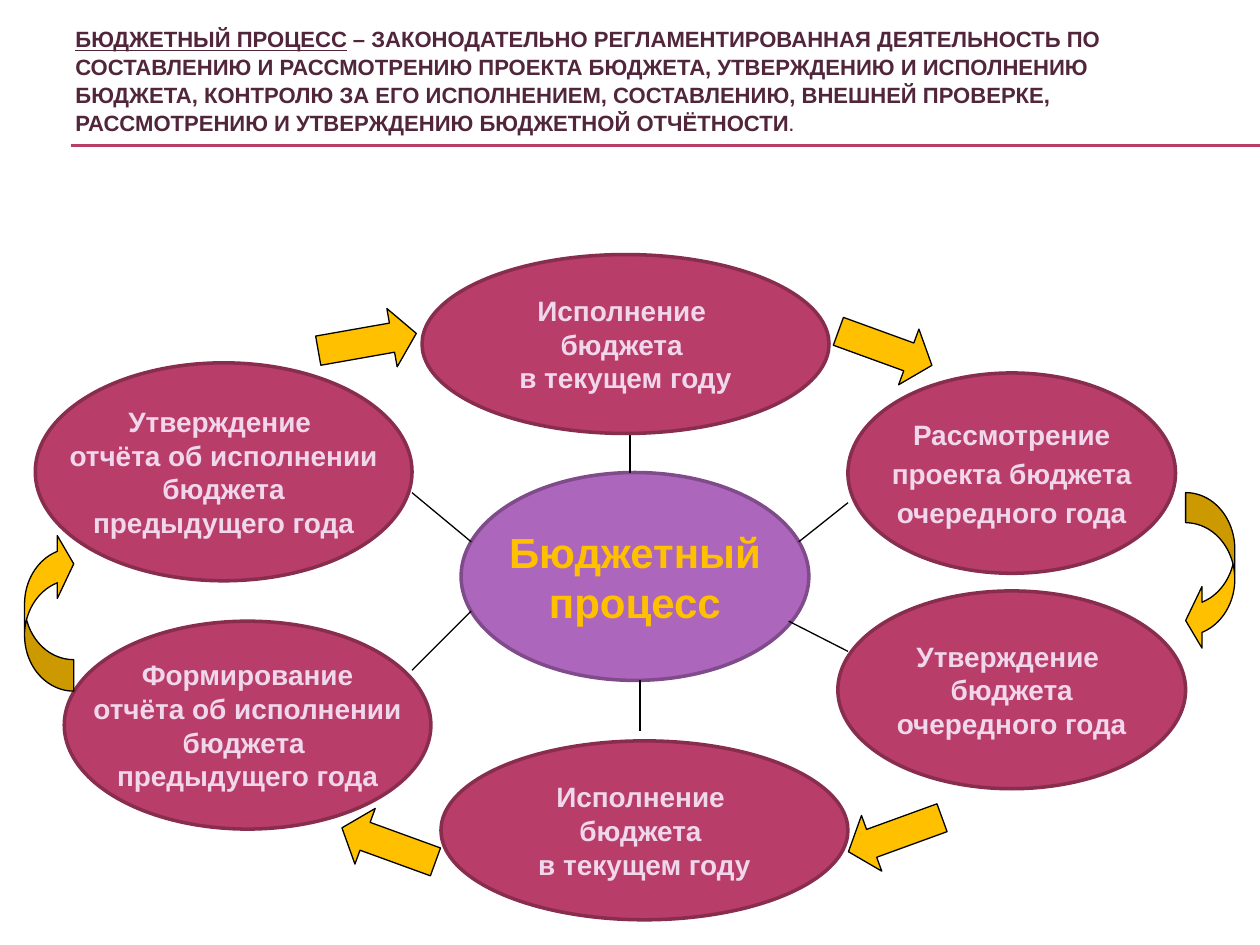
from lxml import etree
from pptx import Presentation
from pptx.dml.color import RGBColor
from pptx.enum.shapes import MSO_CONNECTOR, MSO_SHAPE
from pptx.enum.text import MSO_ANCHOR, PP_ALIGN
from pptx.oxml.ns import qn
from pptx.util import Inches, Pt

STRAIGHT = MSO_CONNECTOR.STRAIGHT
OVAL = MSO_SHAPE.OVAL
RIGHT_ARROW = MSO_SHAPE.RIGHT_ARROW
CURVED_LEFT = MSO_SHAPE.CURVED_LEFT_ARROW
CURVED_DOWN = MSO_SHAPE.CURVED_DOWN_ARROW
MIDDLE = MSO_ANCHOR.MIDDLE
CENTER = PP_ALIGN.CENTER

PLUM = RGBColor(0x51, 0x25, 0x3A)
CRIMSON = RGBColor(0xB8, 0x3D, 0x68)
DARK_CRIMSON = RGBColor(0x88, 0x2D, 0x4D)
PINK = RGBColor(0xF1, 0xD7, 0xEC)
VIOLET = RGBColor(0xAC, 0x66, 0xBB)
DARK_VIOLET = RGBColor(0x7F, 0x4B, 0x8A)
GOLD = RGBColor(0xFF, 0xC0, 0x00)
BLACK = RGBColor(0, 0, 0)

prs = Presentation()
prs.slide_width, prs.slide_height = Inches(10), Inches(7.5)
slide = prs.slides.add_slide(prs.slide_layouts[6])


def add_line(start_x, start_y, end_x, end_y, color):
    line = slide.shapes.add_connector(
        STRAIGHT, Inches(start_x), Inches(start_y), Inches(end_x), Inches(end_y))
    line.line.color.rgb = color
    line.line.width = Pt(0.75)
    etree.SubElement(line._element.spPr, qn("a:effectLst"))


def add_oval(box, lines, fill, outline, color, size, space_before=0):
    oval = slide.shapes.add_shape(OVAL, *map(Inches, box))
    oval.shadow.inherit = False
    oval.fill.solid()
    oval.fill.fore_color.rgb = fill
    oval.line.color.rgb = outline
    oval.line.width = Pt(2)
    frame = oval.text_frame
    frame.word_wrap = False
    frame.vertical_anchor = MIDDLE
    frame.text = "\n".join(lines)
    for paragraph in frame.paragraphs:
        paragraph.alignment = CENTER
        paragraph.space_before = Pt(space_before)
        paragraph.font.name = "Arial"
        paragraph.font.size = Pt(size)
        paragraph.font.bold = True
        paragraph.font.color.rgb = color


for rule_y in (1.15, 1.16):
    add_line(0.56, rule_y, 10, rule_y, CRIMSON)

title = slide.shapes.add_textbox(Inches(0.5), Inches(0.28), Inches(8.99), Inches(0.87))
title_frame = title.text_frame
title_frame.word_wrap = True
title_frame.vertical_anchor = MIDDLE
title_frame.margin_bottom = Inches(0.21)
definition = title_frame.paragraphs[0]
definition.line_spacing = 1.05
definition.font.name = "Arial"
definition.font.size = Pt(12.6)
definition.font.color.rgb = PLUM
for text, bold, underline in (
    ("БЮДЖЕТНЫЙ ПРОЦЕСС", True, True),
    (" – ЗАКОНОДАТЕЛЬНО РЕГЛАМЕНТИРОВАННАЯ ДЕЯТЕЛЬНОСТЬ ПО СОСТАВЛЕНИЮ И "
     "РАССМОТРЕНИЮ ПРОЕКТА БЮДЖЕТА, УТВЕРЖДЕНИЮ И ИСПОЛНЕНИЮ БЮДЖЕТА, КОНТРОЛЮ "
     "ЗА ЕГО ИСПОЛНЕНИЕМ, СОСТАВЛЕНИЮ, ВНЕШНЕЙ ПРОВЕРКЕ, РАССМОТРЕНИЮ И "
     "УТВЕРЖДЕНИЮ БЮДЖЕТНОЙ ОТЧЁТНОСТИ", True, False),
    (".", False, False),
):
    run = definition.add_run()
    run.text = text
    run.font.bold = bold
    run.font.underline = underline

add_oval((3.66, 3.75, 2.76, 1.65), ("Бюджетный", "процесс"), VIOLET, DARK_VIOLET, GOLD, 24)

for spoke in (
    (5.08, 5.4, 5.08, 5.8),
    (3.74, 4.85, 3.27, 5.32),
    (3.27, 3.91, 3.74, 4.3),
    (5, 3.36, 5, 3.75),
    (6.34, 4.3, 6.73, 3.99),
    (6.26, 4.93, 6.73, 5.17),
):
    add_line(*spoke, BLACK)

execution = ("Исполнение ", "бюджета ", "в текущем году")
for box, lines, space_before in (
    ((3.35, 2.02, 3.23, 1.42), execution, 0),
    ((6.73, 2.96, 2.6, 1.59), ("Рассмотрение", "проекта бюджета", "очередного года"), 3.2),
    ((6.65, 4.69, 2.76, 1.57), ("Утверждение ", "бюджета", "очередного года"), 0),
    ((3.5, 5.88, 3.23, 1.42), execution, 0),
    ((0.51, 4.93, 2.91, 1.65),
     ("Формирование", "отчёта об исполнении", "бюджета ", "предыдущего года"), 0),
    ((0.28, 2.88, 2.99, 1.73),
     ("Утверждение ", "отчёта об исполнении", " бюджета ", "предыдущего года"), 0),
):
    add_oval(box, lines, CRIMSON, DARK_CRIMSON, PINK, 16, space_before)

straight_adjustments = (0.5, 0.416)
for kind, box, rotation, adjustments in (
    (RIGHT_ARROW, (6.63, 2.53, 0.79, 0.47), 20, straight_adjustments),
    (CURVED_LEFT, (9.41, 3.91, 0.39, 1.26), 0, (0.613, 1.253, 0.333)),
    (RIGHT_ARROW, (6.71, 6.39, 0.79, 0.47), 160, straight_adjustments),
    (RIGHT_ARROW, (2.69, 6.47, 0.79, 0.47), 200, straight_adjustments),
    (CURVED_DOWN, (-0.24, 4.66, 1.26, 0.39), 270, (0.64, 1.279, 0.333)),
    (RIGHT_ARROW, (2.52, 2.48, 0.79, 0.47), 350, straight_adjustments),
):
    arrow = slide.shapes.add_shape(kind, *map(Inches, box))
    arrow.shadow.inherit = False
    arrow.rotation = rotation
    for index, value in enumerate(adjustments):
        arrow.adjustments[index] = value
    arrow.fill.solid()
    arrow.fill.fore_color.rgb = GOLD
    arrow.line.color.rgb = BLACK
    arrow.line.width = Pt(0.75)

prs.save("out.pptx")
